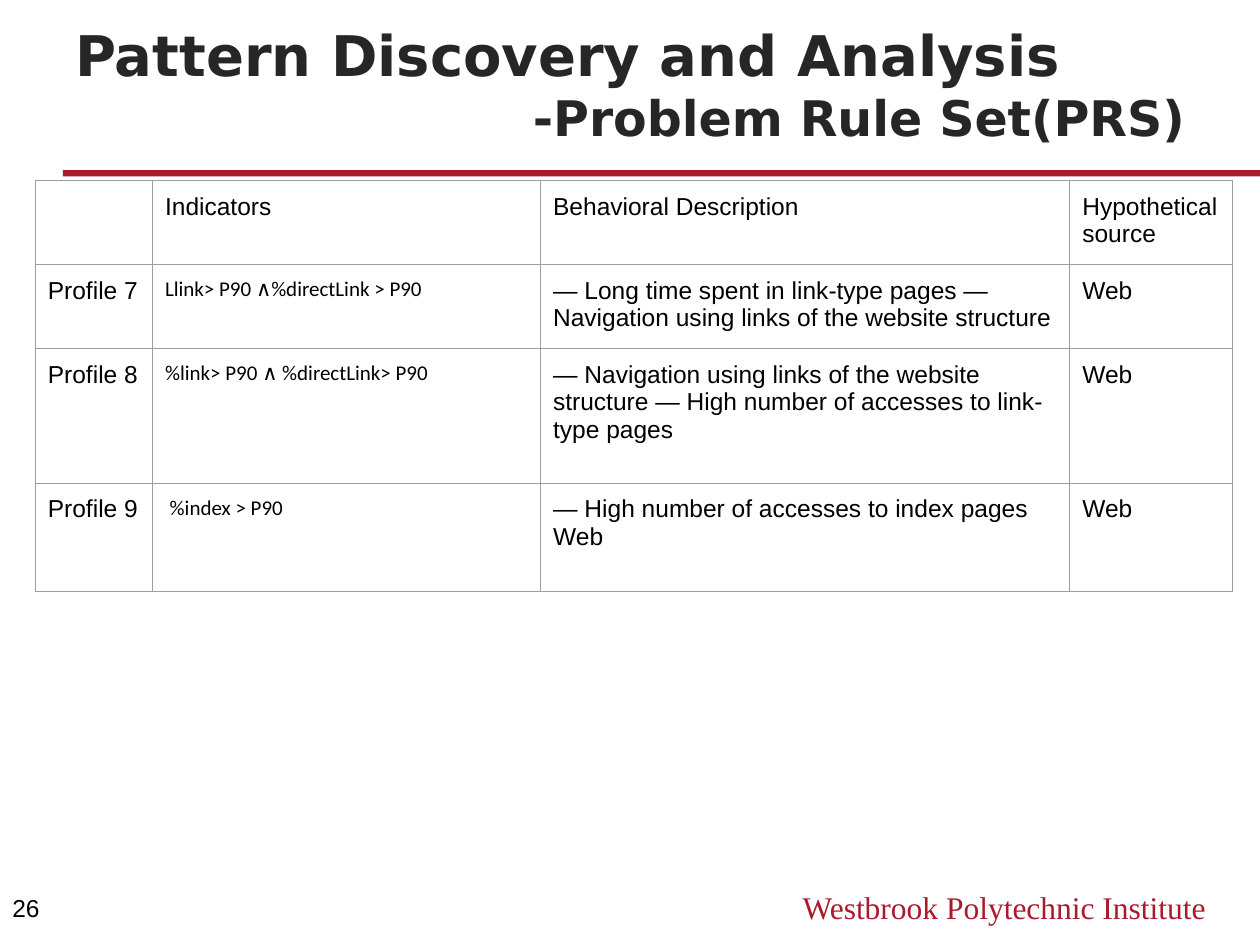
from dataclasses import dataclass

from lxml.etree import SubElement
from pptx import Presentation
from pptx.dml.color import RGBColor
from pptx.enum.shapes import MSO_SHAPE as Shape
from pptx.enum.text import MSO_ANCHOR as Anchor, PP_ALIGN as Align
from pptx.oxml.ns import qn
from pptx.slide import Slide
from pptx.util import Inches, Pt

COLORS = {"crimson": "AB192D", "heading": "262626", "body": "000000", "grid": "9E9E9E"}
COLUMN_WIDTHS = [0.93, 3.08, 4.2, 1.29]
ROW_HEIGHTS = [0.64, 0.64, 1.07, 0.86]
PROFILES = [
    ["", "Indicators", "Behavioral Description", "Hypothetical source"],
    ["Profile 7", "Llink> P90 ∧%directLink > P90",
     "— Long time spent in link-type pages — Navigation using links of the website structure",
     "Web"],
    ["Profile 8", "%link> P90 ∧ %directLink> P90",
     "— Navigation using links of the website structure — "
     "High number of accesses to link-type pages", "Web"],
    ["Profile 9", " %index > P90", "— High number of accesses to index pages Web", "Web"],
]


@dataclass
class SlideBuilder:
    """Draws styled elements on the current slide."""
    slide: Slide
    font: str = "Arial"
    size: int = 14

    def style(self, paragraph, color="body", font=None, size=None, bold=False, align=Align.LEFT):
        paragraph.alignment = align
        for run in paragraph.runs:
            run.font.name = font or self.font
            run.font.size = Pt(size or self.size)
            run.font.bold = bold
            run.font.color.rgb = RGBColor.from_string(COLORS[color])

    def bar(self, box, color):
        rule = self.slide.shapes.add_shape(Shape.RECTANGLE, *map(Inches, box))
        rule.shadow.inherit = False
        rule.fill.solid()
        rule.fill.fore_color.rgb = RGBColor.from_string(COLORS[color])
        rule.line.fill.background()

    def text(self, box, lines, anchor=Anchor.TOP, inset=0.05):
        frame = self.slide.shapes.add_textbox(*map(Inches, box)).text_frame
        frame.word_wrap = True
        frame.vertical_anchor = anchor
        frame.margin_left = frame.margin_right = Inches(0.1)
        frame.margin_top = frame.margin_bottom = Inches(inset)
        frame.text = "\n".join(wording for wording, _ in lines)
        for paragraph, (_, look) in zip(frame.paragraphs, lines):
            self.style(paragraph, **look)

    def borders(self, cell):
        properties = cell._tc.get_or_add_tcPr()
        for position, side in enumerate(("a:lnL", "a:lnR", "a:lnT", "a:lnB")):
            line = SubElement(properties, qn(side), w=str(Pt(0.75)))
            fill = SubElement(line, qn("a:solidFill"))
            SubElement(fill, qn("a:srgbClr"), val=COLORS["grid"])
            properties.insert(position, line)

    def table(self, left, top, widths, heights, rows):
        box = map(Inches, (left, top, sum(widths), sum(heights)))
        table = self.slide.shapes.add_table(len(rows), len(widths), *box).table
        table.first_row = table.horz_banding = False
        for column, width in zip(table.columns, widths):
            column.width = Inches(width)
        for row, height, wordings in zip(table.rows, heights, rows):
            row.height = Inches(height)
            for cell, wording in zip(row.cells, wordings):
                cell.text = wording
                cell.margin_left = cell.margin_right = Inches(0.1)
                cell.margin_top = cell.margin_bottom = Inches(0.1)
                cell.fill.background()
                self.borders(cell)
                look = {"font": "Calibri", "size": 12} if "P90" in wording else {}
                self.style(cell.text_frame.paragraphs[0], **look)


def main():
    deck = Presentation()
    deck.slide_width, deck.slide_height = Inches(10), Inches(7.5)
    builder = SlideBuilder(deck.slides.add_slide(deck.slide_layouts[6]))
    heading = {"color": "heading", "font": "DejaVu Sans", "bold": True}
    builder.bar((0.5, 1.35, 9.5, 0.05), "crimson")
    builder.text((6, 7, 3.67, 0.4), [
        ("Westbrook Polytechnic Institute",
         {"color": "crimson", "font": "Times New Roman", "size": 18, "align": Align.RIGHT})])
    builder.text((0.5, 0.38, 9, 0.88), [
        ("Pattern Discovery and Analysis", {**heading, "size": 32}),
        ("-Problem Rule Set(PRS)", {**heading, "size": 28, "align": Align.RIGHT}),
    ], Anchor.BOTTOM, inset=0.1)
    builder.text((0, 6.99, 0.5, 0.43), [("26", {})], Anchor.MIDDLE)
    builder.table(0.28, 1.43, COLUMN_WIDTHS, ROW_HEIGHTS, PROFILES)
    deck.save("out.pptx")


if __name__ == "__main__":
    main()
